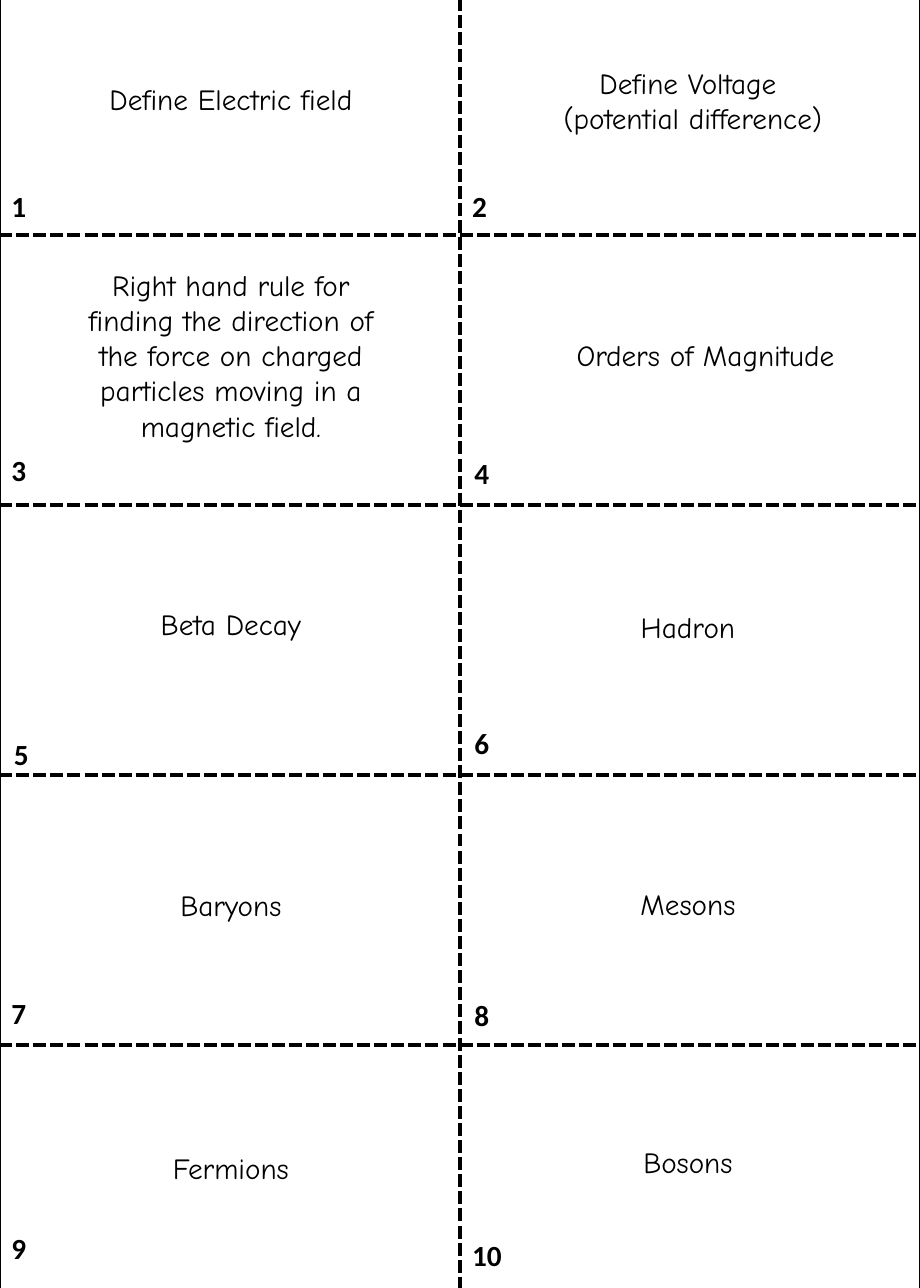
import pptx
import pptx.util
import pptx.oxml
import pptx.oxml.ns
import pptx.dml.color
import pptx.enum.text

Inches = pptx.util.Inches
Pt = pptx.util.Pt
BLACK = pptx.dml.color.RGBColor(0, 0, 0)

CARDS = [
    ("Define Electric field", (0.55, 0.65, 0.4), (0, 1.56)),
    ("Define Voltage\n (potential difference)", (4.46, 0.51, 1.01), (3.94, 1.56)),
    ("Right hand rule for finding the direction of the force on charged "
     "particles moving in a magnetic field.", (0.55, 2.24, 2.22), (0, 3.82)),
    ("Orders of Magnitude", (4.61, 2.84, 0.71), (3.96, 3.85)),
    ("Beta Decay", (0.55, 5.14, 0.71), (0.02, 6.25)),
    ("Hadron", (4.46, 5.16, 0.71), (3.96, 6.16)),
    ("Baryons", (0.55, 7.54, 0.4), (0, 8.47)),
    ("Mesons", (4.46, 7.53, 0.4), (3.96, 8.48)),
    ("Fermions", (0.55, 9.79, 0.4), (0, 10.48)),
    ("Bosons", (4.46, 9.74, 0.4), (3.94, 10.54)),
]
COLS = 2
ROWS = len(CARDS) // COLS
WIDE, HIGH = 7.87, 11.02
TOP, STEP = -0.3, 2.31


def add_edge(cell, side, inner):
    width = Pt(3 if inner else 1)
    dash = "dash" if inner else "solid"
    edge = pptx.oxml.parse_xml(
        f'<a:ln{side} {pptx.oxml.ns.nsdecls("a")} w="{width}" cap="flat" cmpd="sng">'
        f'<a:solidFill><a:srgbClr val="{BLACK}"/></a:solidFill>'
        f'<a:prstDash val="{dash}"/></a:ln{side}>')
    cell._tc.get_or_add_tcPr().append(edge)


def add_grid(slide):
    frame = slide.shapes.add_table(
        ROWS, COLS, 0, Inches(TOP), Inches(WIDE), Inches(STEP * ROWS))
    table = frame.table
    table.first_row = table.horz_banding = False
    for r in range(ROWS):
        table.rows[r].height = Inches(STEP)
        for c in range(COLS):
            cell = table.cell(r, c)
            inner = {"L": c > 0, "R": c < COLS - 1,
                     "T": r > 0, "B": r < ROWS - 1}
            for side, flag in inner.items():
                add_edge(cell, side, flag)
            cell.fill.background()


def add_text(slide, text, box, face, bold, align):
    shape = slide.shapes.add_textbox(*[Inches(v) for v in box])
    frame = shape.text_frame
    frame.word_wrap = True
    frame.auto_size = pptx.enum.text.MSO_AUTO_SIZE.SHAPE_TO_FIT_TEXT
    frame.text = text
    for para in frame.paragraphs:
        para.alignment = align
        para.font.name = face
        para.font.size = Pt(18)
        para.font.bold = bold
        para.font.color.rgb = BLACK


def main():
    deck = pptx.Presentation()
    deck.slide_width, deck.slide_height = Inches(WIDE), Inches(HIGH)
    slide = deck.slides.add_slide(deck.slide_layouts[6])
    add_grid(slide)
    align = pptx.enum.text.PP_ALIGN
    for num, (term, (left, top, height), spot) in enumerate(CARDS, 1):
        add_text(slide, term, (left, top, 2.85, height),
                 "Comic Neue", False, align.CENTER)
        width = 0.36 if num < 10 else 0.53
        add_text(slide, str(num), (*spot, width, 0.41),
                 "Calibri", True, align.LEFT)
    deck.save("out.pptx")


if __name__ == "__main__":
    main()
